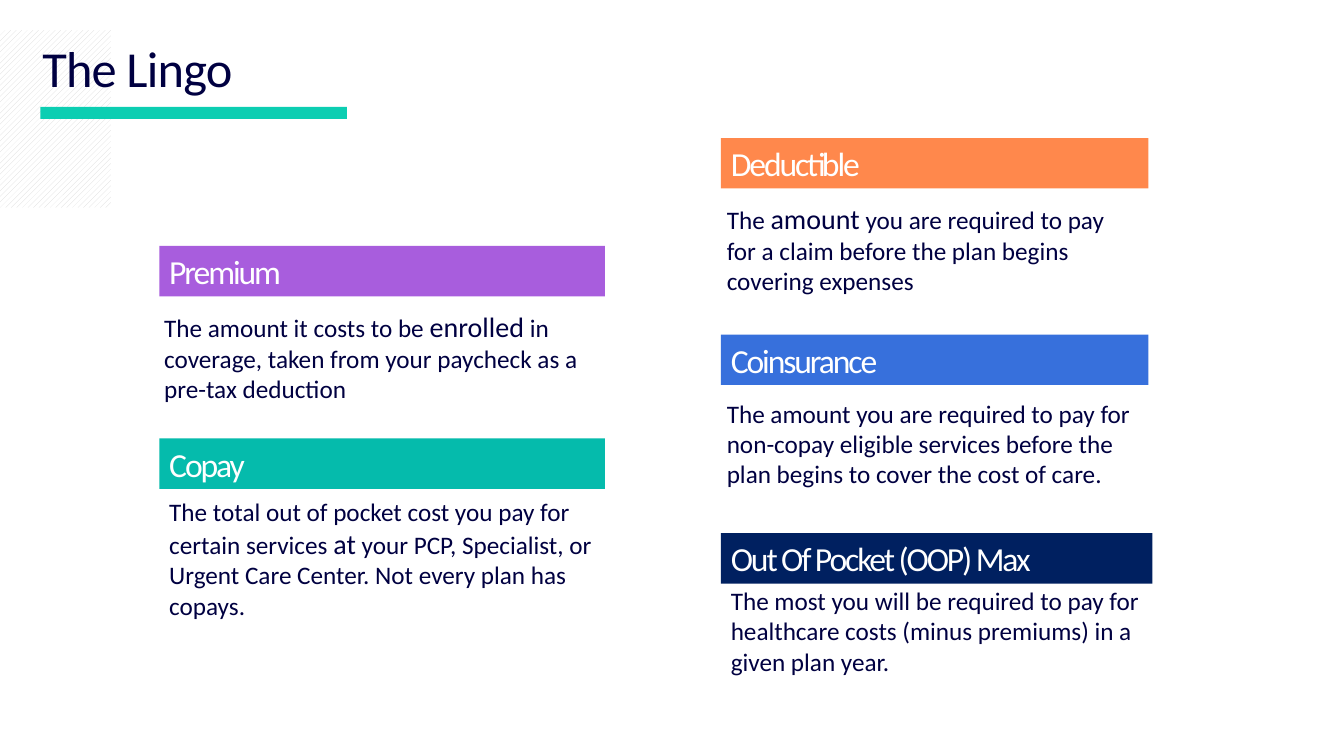
"""Build a slide that explains health plan terms."""
from pptx import Presentation
from pptx.dml.color import RGBColor
from pptx.enum import dml, shapes, text
from pptx.util import Inches, Pt

COLORS = {"ink": "000041", "white": "FFFFFF", "hatch": "D9D9D9", "accent": "0CCEB2",
          "purple": "A85DDD", "teal": "05BBAC", "orange": "FF884C",
          "blue": "3770DC", "navy": "002060"}
FONT = "Calibri"
BAR_HEIGHT = 0.5
LARGE = 20

TITLE = "The Lingo"
# term, colour, bar (left, top, width), definition box, definition runs (text, size)
TERMS = [
    ("Premium", "purple", (1.58, 2.44, 4.42), (1.53, 3.02, 4.6, 1.04),
     [("The amount it costs to be ", 18), ("enrolled", LARGE),
      (" in coverage, taken from your paycheck as a pre-tax deduction", 18)]),
    ("Copay", "teal", (1.58, 4.35, 4.42), (1.58, 4.87, 4.6, 1.35),
     [("The total out of pocket cost you pay for certain services ", 18), ("at", LARGE),
      (" your PCP, Specialist, or Urgent Care Center. Not every plan has copays.", 18)]),
    ("Deductible", "orange", (7.15, 1.37, 4.24), (7.11, 1.95, 4.28, 1.04),
     [("The ", 18), ("amount", LARGE),
      (" you are required to pay for a claim before the plan begins covering expenses", 18)]),
    ("Coinsurance", "blue", (7.15, 3.32, 4.24), (7.11, 3.9, 4.28, 1.31),
     [("The amount you are required to pay for non-copay eligible services before the "
       "plan begins to cover the cost of care.", 18)]),
    ("Out Of Pocket (OOP) Max", "navy", (7.15, 5.29, 4.28), (7.15, 5.76, 4.6, 1.01),
     [("The most you will be required to pay for healthcare costs (minus premiums) in a "
       "given plan year.", 18)]),
]


def rgb(name):
    return RGBColor.from_string(COLORS[name])


def write(sp, runs, color="ink", spacing=0, anchor=text.MSO_ANCHOR.TOP, line=None):
    tf = sp.text_frame
    tf.word_wrap = True
    tf.auto_size = text.MSO_AUTO_SIZE.NONE
    tf.vertical_anchor = anchor
    p = tf.paragraphs[0]
    p.alignment = text.PP_ALIGN.LEFT
    if line:
        p.line_spacing = line
    for words, size in runs:
        r = p.add_run()
        r.text = words
        r.font.name = FONT
        r.font.size = Pt(size)
        r.font.color.rgb = rgb(color)
        if spacing:
            r.font._element.set("spc", str(round(spacing * 100)))


def add_bar(s, box, color):
    sp = s.shapes.add_shape(shapes.MSO_SHAPE.RECTANGLE, *map(Inches, box))
    sp.shadow.inherit = False
    sp.line.fill.background()
    sp.fill.solid()
    sp.fill.fore_color.rgb = rgb(color)
    return sp


def main():
    prs = Presentation()
    prs.slide_width, prs.slide_height = Inches(13.33), Inches(7.5)
    s = prs.slides.add_slide(prs.slide_layouts[5])

    hatch = add_bar(s, (0, 0.3, 1.1, 1.76), "white")
    hatch.fill.patterned()
    hatch.fill.pattern = dml.MSO_PATTERN.WIDE_UPWARD_DIAGONAL
    hatch.fill.fore_color.rgb = rgb("hatch")
    hatch.fill.back_color.rgb = rgb("white")
    add_bar(s, (0.4, 1.06, 3.04, 0.12), "accent")

    title = s.shapes.title
    title.left, title.top, title.width, title.height = map(Inches, (0.32, 0.16, 10.02, 1.09))
    write(title, [(TITLE, 36)], spacing=-0.6, anchor=text.MSO_ANCHOR.MIDDLE, line=0.9)
    title.element.getparent().append(title.element)

    for term, color, bar, box, runs in TERMS:
        write(add_bar(s, (*bar, BAR_HEIGHT), color), [(term, 24)], color="white", spacing=-1.5)
        write(s.shapes.add_textbox(*map(Inches, box)), runs)

    prs.save("out.pptx")


if __name__ == "__main__":
    main()
